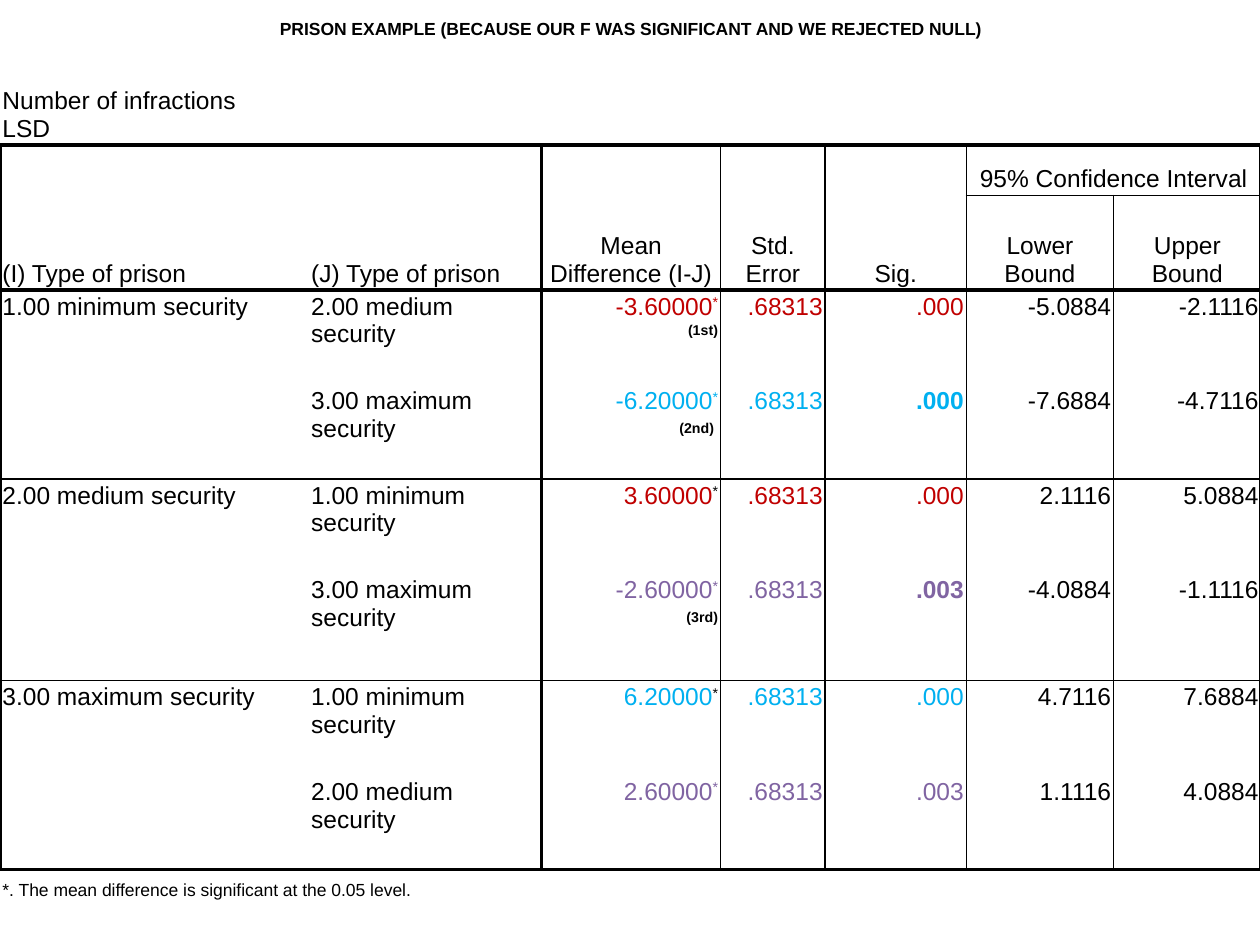
from typing import NamedTuple

from lxml import etree
from pptx import Presentation
from pptx.dml.color import RGBColor
from pptx.enum.text import MSO_ANCHOR, PP_ALIGN
from pptx.oxml.ns import qn
from pptx.util import Pt

LEFT, CENTER, RIGHT = PP_ALIGN.LEFT, PP_ALIGN.CENTER, PP_ALIGN.RIGHT
TOP, MIDDLE, BOTTOM = MSO_ANCHOR.TOP, MSO_ANCHOR.MIDDLE, MSO_ANCHOR.BOTTOM

COLORS = {
    "black": "000000",
    "white": "FFFFFF",
    "red": "C00000",
    "blue": "00B0F0",
    "purple": "8064A2",
}
FONT = "Arial"
THICK, THIN = 2.25, 1

# Table grid, in points
COL_WIDTHS = [176.4, 133.2, 102.24, 59.76, 80.64, 84.24, 84.24]
ROW_HEIGHTS = [28.8, 54, 28.8, 54, 54, 54, 54, 61.2, 54, 54, 28.8]
HEAD_ROW, BODY_ROW, NOTE_ROW = 2, 4, 10
INTERVAL_COL = 5

# Line weights by grid edge; edges left out have no line
VERTICAL = {0: THICK, 2: THICK, 3: THIN, 4: THIN, 5: THIN, 6: THIN, 7: THICK}
HORIZONTAL = {2: THICK, 3: THIN, 4: THICK, 6: THIN, 8: THIN, 10: THICK}


class Comparison(NamedTuple):
    other: str
    difference: str
    sig: str
    lower: str
    upper: str
    color: str
    star_color: str
    rank: str = ""
    rank_inline: bool = False
    bold_sig: bool = False


MIN, MED, MAX = "1.00 minimum security", "2.00 medium security", "3.00 maximum security"
STD_ERROR = ".68313"
GROUPS = {
    MIN: [
        Comparison(MED, "-3.60000", ".000", "-5.0884", "-2.1116", "red", "red",
                   "(1st)", rank_inline=True),
        Comparison(MAX, "-6.20000", ".000", "-7.6884", "-4.7116", "blue", "blue",
                   "(2nd) ", bold_sig=True),
    ],
    MED: [
        Comparison(MIN, "3.60000", ".000", "2.1116", "5.0884", "red", "black"),
        Comparison(MAX, "-2.60000", ".003", "-4.0884", "-1.1116", "purple", "purple",
                   "(3rd)", bold_sig=True),
    ],
    MAX: [
        Comparison(MIN, "6.20000", ".000", "4.7116", "7.6884", "blue", "black"),
        Comparison(MED, "2.60000", ".003", "1.1116", "4.0884", "purple", "purple"),
    ],
}
HEADINGS = ["(I) Type of prison", "(J) Type of prison", "Mean Difference (I-J)",
            "Std. Error", "Sig."]


def style(font, color: str = "black", size: float = 14, bold: bool = False) -> None:
    font.name, font.size, font.bold = FONT, Pt(size), bold
    font.color.rgb = RGBColor.from_string(COLORS[color])


def write(cell, text: str, align=LEFT, anchor=TOP, color: str = "black",
          size: float = 14, bold: bool = False) -> None:
    """Fill a cell with evenly styled text, one paragraph a line."""
    cell.text = text
    cell.vertical_anchor = anchor
    for p in cell.text_frame.paragraphs:
        p.alignment, p.line_spacing = align, Pt(16)
        style(p.font, color, size, bold)


def add_superscript(p, text: str, color: str, bold: bool = False) -> None:
    r = p.add_run()
    r.text = text
    style(r.font, color, bold=bold)
    r.font._element.set("baseline", "30000")


def write_difference(cell, item: Comparison) -> None:
    """Mean difference with its star and, where given, its rank."""
    write(cell, item.difference, RIGHT, color=item.color)
    p = cell.text_frame.paragraphs[0]
    add_superscript(p, "*", item.star_color)
    if not item.rank:
        return
    if item.rank_inline:
        p.add_line_break()
    else:
        p = cell.text_frame.add_paragraph()
        p.alignment, p.line_spacing = RIGHT, 1.15
    add_superscript(p, item.rank, "black", bold=True)


def draw_border(cell, tag: str, weight: float) -> None:
    ln = etree.SubElement(cell._tc.get_or_add_tcPr(), qn(tag), w=str(Pt(weight)))
    if weight:
        fill = etree.SubElement(ln, qn("a:solidFill"))
        etree.SubElement(fill, qn("a:srgbClr"), val=COLORS["black"])
    else:
        etree.SubElement(ln, qn("a:noFill"))


def vertical_weight(row: int, edge: int) -> float:
    inside_merge = row == HEAD_ROW and edge == INTERVAL_COL + 1
    in_body = HEAD_ROW <= row < NOTE_ROW
    return VERTICAL.get(edge, 0) if in_body and not inside_merge else 0


def horizontal_weight(edge: int, col: int) -> float:
    inside_merge = edge == HEAD_ROW + 1 and col < INTERVAL_COL
    return 0 if inside_merge else HORIZONTAL.get(edge, 0)


def format_cell(cell, row: int, col: int) -> None:
    """Margins, borders and fill; a merged cell takes the edges of its span."""
    height = cell.span_height if cell.is_merge_origin else 1
    width = cell.span_width if cell.is_merge_origin else 1
    cell.margin_left = cell.margin_right = Pt(1.44)
    cell.margin_top = cell.margin_bottom = Pt(1.44)
    draw_border(cell, "a:lnL", vertical_weight(row, col))
    draw_border(cell, "a:lnR", vertical_weight(row, col + width))
    draw_border(cell, "a:lnT", horizontal_weight(row, col))
    draw_border(cell, "a:lnB", horizontal_weight(row + height, col))
    cell.fill.solid()
    cell.fill.fore_color.rgb = RGBColor.from_string(COLORS["white"])


def main() -> None:
    prs = Presentation()
    prs.slide_width, prs.slide_height = Pt(720), Pt(540)
    s = prs.slides.add_slide(prs.slide_layouts[6])

    # Table and grid
    table = s.shapes.add_table(len(ROW_HEIGHTS), len(COL_WIDTHS), 0, 0,
                               Pt(720), Pt(sum(ROW_HEIGHTS))).table
    table.first_row = table.horz_banding = False
    for column, width in zip(table.columns, COL_WIDTHS):
        column.width = Pt(width)
    for row, height in zip(table.rows, ROW_HEIGHTS):
        row.height = Pt(height)

    # Merged cells
    last = len(COL_WIDTHS) - 1
    for row in (0, 1, NOTE_ROW):
        table.cell(row, 0).merge(table.cell(row, last))
    for col in range(INTERVAL_COL):
        table.cell(HEAD_ROW, col).merge(table.cell(HEAD_ROW + 1, col))
    table.cell(HEAD_ROW, INTERVAL_COL).merge(table.cell(HEAD_ROW, last))
    for row in range(BODY_ROW, NOTE_ROW, 2):
        table.cell(row, 0).merge(table.cell(row + 1, 0))

    for row in range(len(ROW_HEIGHTS)):
        for col in range(len(COL_WIDTHS)):
            format_cell(table.cell(row, col), row, col)

    # Title, caption and note
    write(table.cell(0, 0),
          "PRISON EXAMPLE (BECAUSE OUR F WAS SIGNIFICANT AND WE REJECTED NULL)",
          CENTER, MIDDLE, size=10, bold=True)
    write(table.cell(1, 0), "Number of infractions\nLSD", anchor=BOTTOM)
    write(table.cell(NOTE_ROW, 0),
          "*. The mean difference is significant at the 0.05 level.", size=10)

    # Headings
    for col, text in enumerate(HEADINGS):
        write(table.cell(HEAD_ROW, col), text, LEFT if col < 2 else CENTER, BOTTOM)
    write(table.cell(HEAD_ROW, INTERVAL_COL), "95% Confidence Interval", CENTER, BOTTOM)
    for col, text in enumerate(["Lower Bound", "Upper Bound"], INTERVAL_COL):
        write(table.cell(HEAD_ROW + 1, col), text, CENTER, BOTTOM)

    # Comparisons, two rows to a prison type
    for group, (prison, items) in enumerate(GROUPS.items()):
        first = BODY_ROW + 2 * group
        write(table.cell(first, 0), prison)
        for row, item in enumerate(items, first):
            write(table.cell(row, 1), item.other)
            write_difference(table.cell(row, 2), item)
            write(table.cell(row, 3), STD_ERROR, RIGHT, color=item.color)
            write(table.cell(row, 4), item.sig, RIGHT, color=item.color,
                  bold=item.bold_sig)
            write(table.cell(row, 5), item.lower, RIGHT)
            write(table.cell(row, 6), item.upper, RIGHT)

    prs.save("out.pptx")


if __name__ == "__main__":
    main()
